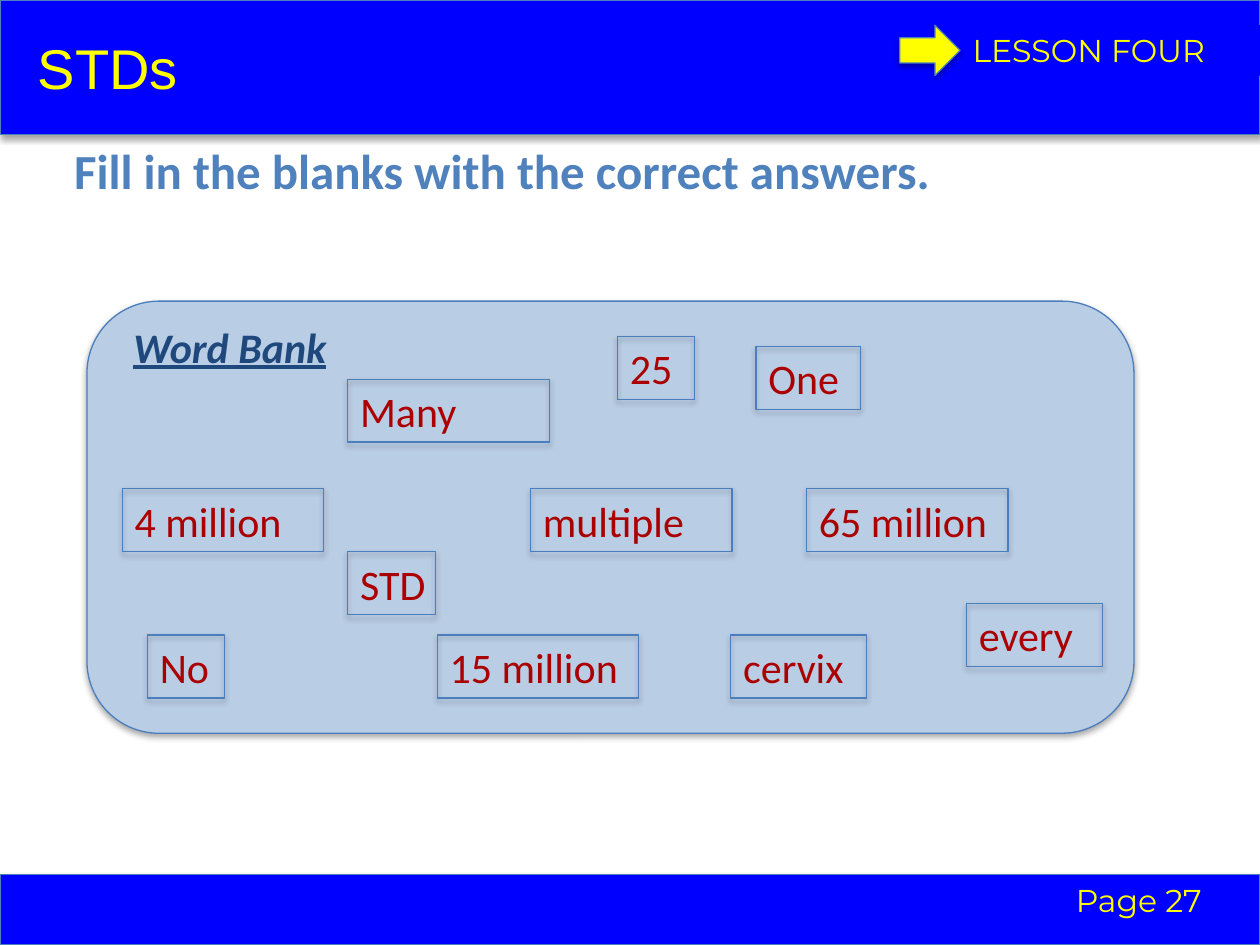
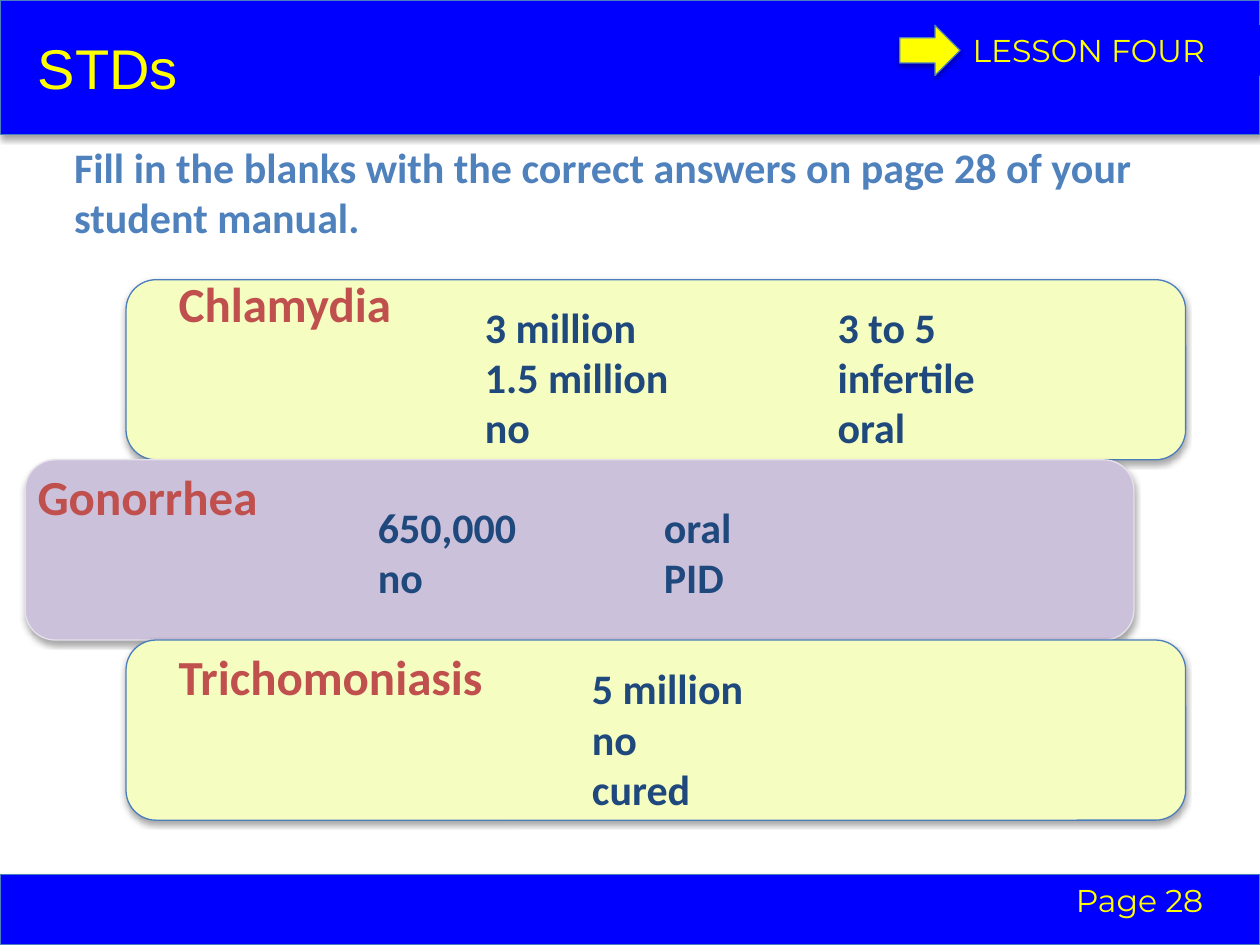
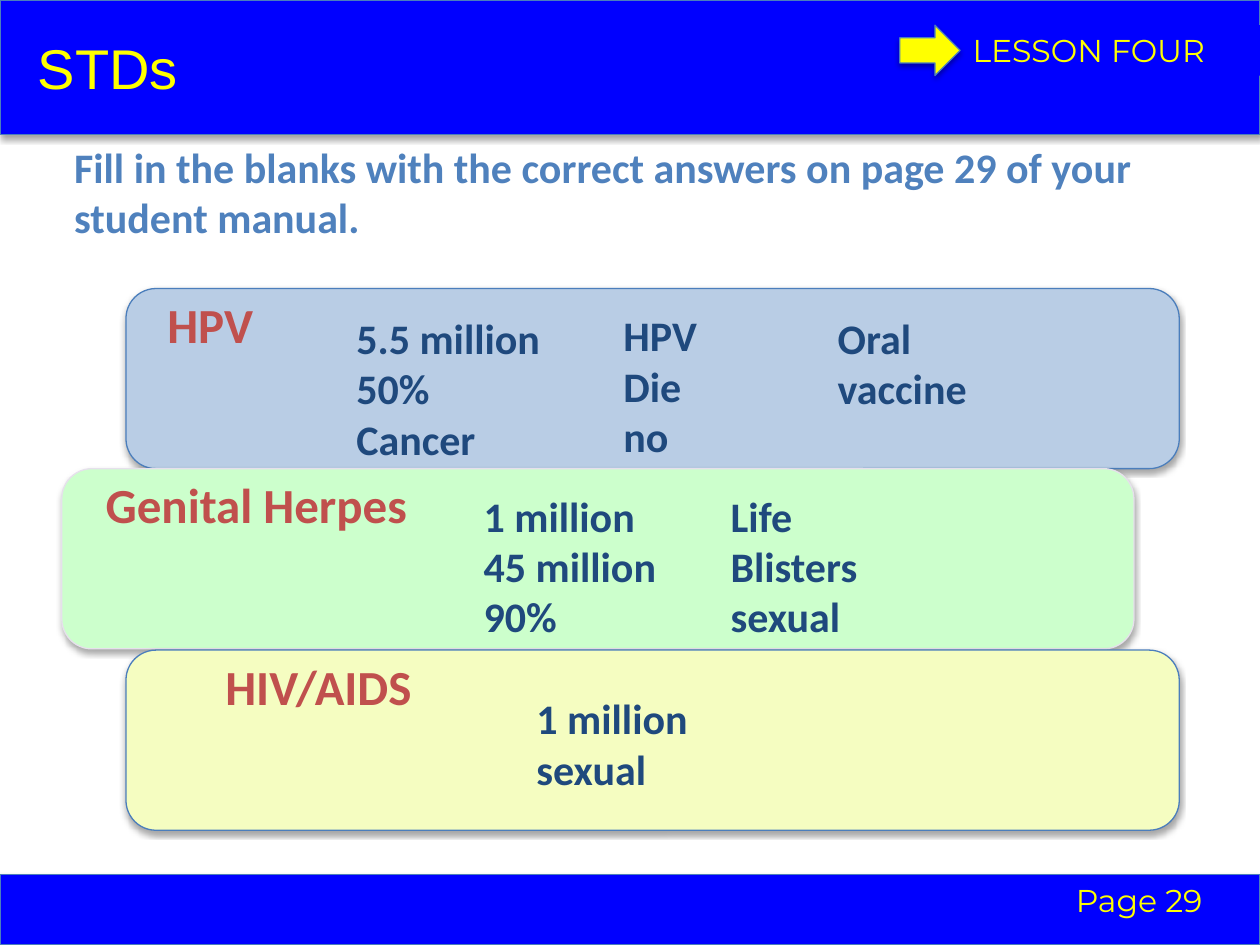
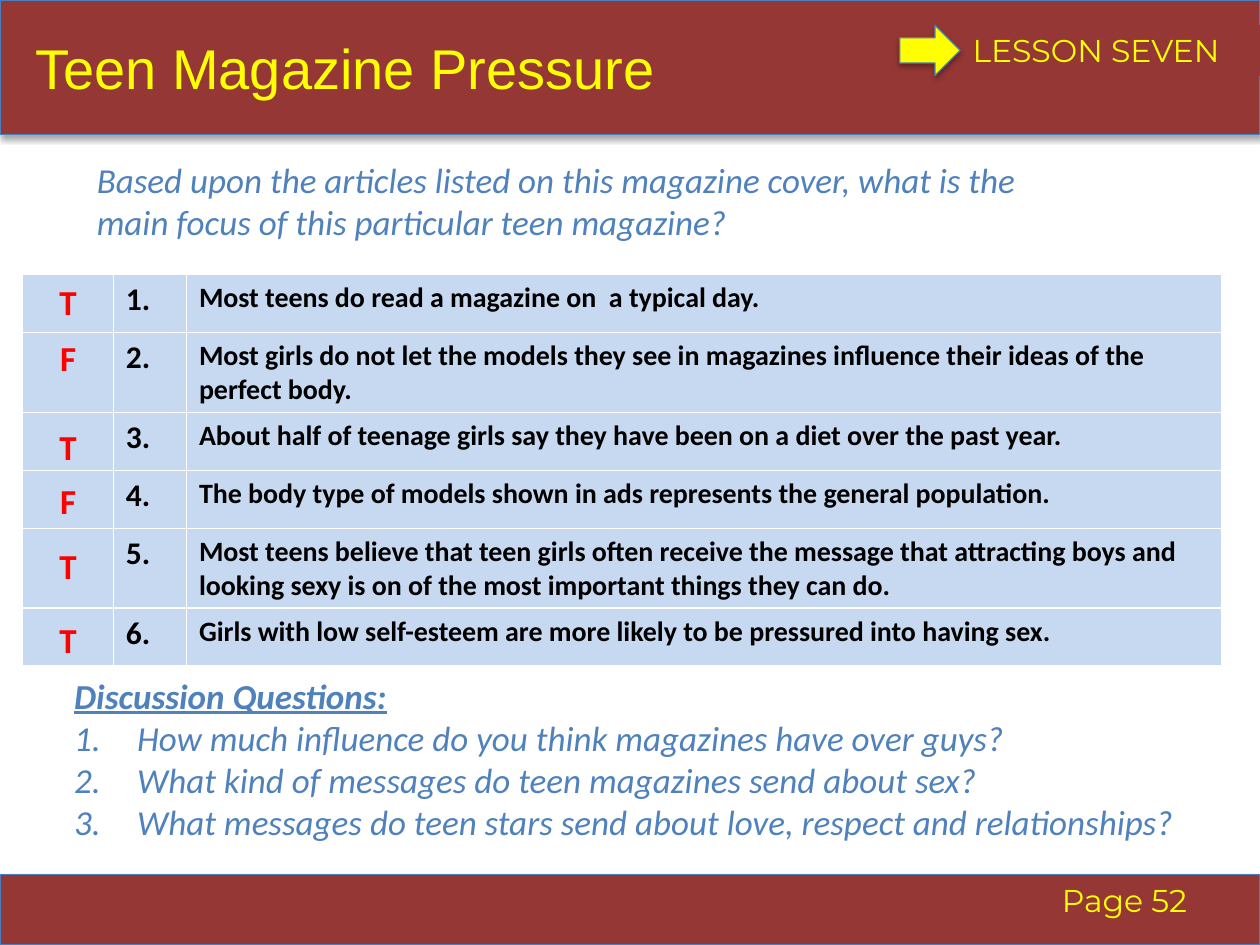
from lxml import etree
from pptx import Presentation
from pptx import util as u
from pptx.dml.color import RGBColor
from pptx.enum import shapes, text
from pptx.oxml import ns

PX = 9144  # EMU in one px, 100 px to the inch
WIDTH, HEIGHT = 1000, 750
LINE_24, PADDING = 41, 9  # height of a 24 pt line, and of a text box around its lines

COLORS = {
    "blue": "0000FF", "maroon": "953735", "yellow": "FFFF00", "outline": "4B7EBC",
    "prompt": "4F81BD", "navy": "1F497D", "brick": "C0504D", "crimson": "AA0000",
    "red": "FF0000", "black": "000000", "sky": "B9CDE5", "lemon": "F5FDC1",
    "lilac": "CCC1DA", "mint": "CCFFCC", "pale": "E6E0EC", "cell": "C6D9F1",
}

# word, left, top, text width, frame width; places are relative to the bank
BANK_WORDS = [
    ("25", 421, 28, 61, 61), ("15 million", 278, 265, 160, 160),
    ("65 million", 571, 149, 160, 160), ("4 million", 28, 149, 160, 160),
    ("No", 48, 265, 61, 61), ("multiple", 352, 149, 160, 160),
    ("cervix", 511, 265, 140, 108), ("One", 531, 36, 83, 83),
    ("Many", 207, 62, 134, 160), ("STD", 207, 199, 92, 70),
    ("every", 698, 240, 129, 108),
]

# card box, fill, line, heading (name, left, top, width), columns (left, top, width, lines)
CARDS_28 = [
    ((100, 222, 841, 143), "lemon", "outline", ("Chlamydia", 32, -10, 243),
     [(275, 12, 170, ["3 million", "1.5 million", "no"]),
      (555, 12, 243, ["3 to 5", "infertile", "oral"])]),
    ((20, 365, 880, 143), "lilac", "pale", ("Gonorrhea", 0, 0, 207),
     [(270, 28, 170, ["650,000", "no"]), (497, 28, 170, ["oral", "PID"])]),
    ((100, 508, 841, 143), "lemon", "outline", ("Trichomoniasis", 32, 0, 289),
     [(360, 13, 254, ["5 million", "no", "cured"])]),
]
CARDS_29 = [
    ((100, 229, 836, 143), "sky", "outline", ("HPV", 23, 0, 165),
     [(173, 14, 170, ["5.5 million", "50%", "Cancer"]),
      (385, 12, 170, ["HPV", "Die", "no"]),
      (555, 14, 170, ["Oral", "vaccine"])]),
    ((49, 372, 851, 143), "mint", "pale", ("Genital Herpes", 25, 0, 269),
     [(325, 12, 170, ["1 million", "45 million", "90%"]),
      (521, 12, 170, ["Life", "Blisters", "sexual"])]),
    ((100, 516, 836, 143), "lemon", "outline", ("HIV/AIDS", 69, 0, 252),
     [(316, 29, 170, ["1 million", "sexual"])]),
]

STATEMENTS = [
    "Most teens do read a magazine on  a typical day.",
    "Most girls do not let the models they see in magazines influence their ideas of the "
    "perfect body.",
    "About half of teenage girls say they have been on a diet over the past year.",
    "The body type of models shown in ads represents the general population.",
    "Most teens believe that teen girls often receive the message that attracting boys and "
    "looking sexy is on of the most important things they can do.",
    "Girls with low self-esteem are more likely to be pressured into having sex.",
]
# answer and its top, relative to the table
ANSWERS = [("T", 0), ("F", 44), ("T", 115), ("F", 158), ("T", 209), ("T", 268)]
QUESTIONS = [
    "How much influence do you think magazines have over guys?",
    "What kind of messages do teen magazines send about sex?",
    "What messages do teen stars send about love, respect and relationships?",
]


def emu(*lengths):
    return [u.Emu(length * PX) for length in lengths]


def rgb(name):
    return RGBColor.from_string(COLORS[name])


def style(para, size, color, name="Calibri", bold=False, italic=False, underline=False):
    font = para.font
    font.name, font.size, font.color.rgb = name, u.Pt(size), rgb(color)
    font.bold, font.italic, font.underline = bold, italic, underline


def write(frame, lines, size, color, align=text.PP_ALIGN.LEFT, **looks):
    """Fill a text frame with one paragraph per line, all in one style."""
    frame.word_wrap = True
    frame.text = "\n".join(lines)
    for para in frame.paragraphs:
        para.alignment = align
        style(para, size, color, **looks)


def add_text(page, box, lines, size, color, **looks):
    frame = page.shapes.add_textbox(*emu(*box)).text_frame
    write(frame, lines, size, color, **looks)
    frame.auto_size = text.MSO_AUTO_SIZE.SHAPE_TO_FIT_TEXT


def add_shadow(shape):
    shape.shadow.inherit = False
    effects = shape.element.spPr.find(ns.qn("a:effectLst"))
    shadow = etree.SubElement(effects, ns.qn("a:outerShdw"), blurRad="40000", dist="23000",
                              dir="5400000", rotWithShape="0")
    tone = etree.SubElement(shadow, ns.qn("a:srgbClr"), val=COLORS["black"])
    etree.SubElement(tone, ns.qn("a:alpha"), val="35000")


def add_panel(page, kind, box, fill=None, line="outline"):
    """Add an outlined shape with a soft shadow; without a fill it is a frame."""
    panel = page.shapes.add_shape(kind, *emu(*box))
    if fill:
        panel.fill.solid()
        panel.fill.fore_color.rgb = rgb(fill)
    else:
        panel.fill.background()
    panel.line.color.rgb = rgb(line)
    panel.line.width = u.Pt(0.75)
    add_shadow(panel)


def add_lesson_label(page, lesson, theme):
    label = page.shapes.add_shape(shapes.MSO_SHAPE.RECTANGLE, *emu(762, 20, 238, 40))
    label.shadow.inherit = False
    label.fill.solid()
    label.fill.fore_color.rgb = rgb(theme)
    label.line.fill.background()
    label.text_frame.vertical_anchor = text.MSO_ANCHOR.TOP
    write(label.text_frame, [lesson], 18, "yellow", name="Montserrat")
    add_panel(page, shapes.MSO_SHAPE.RIGHT_ARROW, (714, 20, 48, 40), "yellow")


def add_page(deck, title, lesson, number, theme="blue", title_left=20, number_left=844):
    """Add a slide with its header band, title, lesson label and footer band."""
    page = deck.slides.add_slide(deck.slide_layouts[5])
    for top, height in ((0, 107), (694, 56)):
        add_panel(page, shapes.MSO_SHAPE.RECTANGLE, (0, top, WIDTH, height), theme)
    heading = page.shapes.title
    heading.element.getparent().append(heading.element)  # in front of the band
    heading.left, heading.top, heading.width, heading.height = emu(
        title_left, 0, 655 - title_left, 107)
    heading.text_frame.vertical_anchor = text.MSO_ANCHOR.MIDDLE
    write(heading.text_frame, [title], 32, "yellow", name="Arial")
    add_lesson_label(page, lesson, theme)
    add_text(page, (number_left, 694, 984 - number_left, 40), [f"Page {number}"], 18,
             "yellow", name="Montserrat")
    return page


def add_word_bank(page, box):
    left, top = box[:2]
    add_panel(page, shapes.MSO_SHAPE.ROUNDED_RECTANGLE, box, "sky")
    add_text(page, (left + 27, top + 11, 181, 50), ["Word Bank"], 24, "navy",
             bold=True, italic=True, underline=True)
    for word, dx, dy, text_width, frame_width in BANK_WORDS:
        add_text(page, (left + dx, top + dy, text_width, 50), [word], 24, "crimson")
        add_panel(page, shapes.MSO_SHAPE.RECTANGLE, (left + dx, top + dy, frame_width, 50))


def add_card(page, box, fill, line, heading, columns):
    left, top = box[:2]
    add_panel(page, shapes.MSO_SHAPE.ROUNDED_RECTANGLE, box, fill, line)
    name, dx, dy, width = heading
    add_text(page, (left + dx, top + dy, width, 57), [name], 28, "brick", bold=True)
    for dx, dy, width, lines in columns:
        height = LINE_24 * len(lines) + PADDING
        add_text(page, (left + dx, top + dy, width, height), lines, 24, "navy", bold=True)


def add_card_page(deck, number, cards):
    page = add_page(deck, "STDs", "LESSON FOUR", number)
    prompt = f"Fill in the blanks with the correct answers on page {number} of your student manual."
    add_text(page, (49, 107, 892, 91), [prompt], 24, "prompt", bold=True)
    for card in cards:
        add_card(page, *card)


def add_statements(page, left, top):
    """Add the true-or-false table with the answers over its first column."""
    widths, row_height = (72, 58, 822), 46
    count = len(STATEMENTS)
    table = page.shapes.add_table(
        count, len(widths), *emu(left, top, sum(widths), row_height * count)).table
    table.horz_banding = False
    for column, width in zip(table.columns, widths):
        column.width = u.Emu(width * PX)
    for number, (row, statement) in enumerate(zip(table.rows, STATEMENTS), 1):
        for cell in row.cells:
            cell.fill.solid()
            cell.fill.fore_color.rgb = rgb("cell")
        write(row.cells[1].text_frame, [f"{number}."], 18, "black", bold=True)
        write(row.cells[2].text_frame, [statement], 16, "black", bold=True)
    for answer, dy in ANSWERS:
        add_text(page, (left, top + dy, widths[0], 44), [answer], 20, "red", bold=True,
                 align=text.PP_ALIGN.CENTER)


def add_discussion(page, box):
    frame = page.shapes.add_textbox(*emu(*box)).text_frame
    write(frame, ["Discussion Questions:", *QUESTIONS], 20, "prompt", italic=True)
    heading, *questions = frame.paragraphs
    style(heading, 20, "prompt", bold=True, italic=True, underline=True)
    indent = 50 * PX
    for para in questions:
        props = para._p.get_or_add_pPr()
        props.set("marL", str(indent))
        props.set("indent", str(-indent))
        numbering = etree.Element(ns.qn("a:buAutoNum"), type="arabicPeriod")
        props.insert(0, numbering)


def main():
    deck = Presentation()
    deck.slide_width, deck.slide_height = emu(WIDTH, HEIGHT)

    page = add_page(deck, "STDs", "LESSON FOUR", 27)
    add_text(page, (49, 107, 713, 57), ["Fill in the blanks with the correct answers."], 28,
             "prompt", bold=True)
    add_word_bank(page, (69, 239, 831, 343))

    add_card_page(deck, 28, CARDS_28)
    add_card_page(deck, 29, CARDS_29)

    page = add_page(deck, "Teen Magazine Pressure", "LESSON SEVEN", 52, theme="maroon",
                    title_left=18, number_left=833)
    add_text(page, (67, 121, 784, 111),
             ["Based upon the articles listed on this magazine cover, what is the main focus "
              "of this particular teen magazine?"], 20, "prompt", italic=True)
    add_statements(page, 18, 218)
    add_discussion(page, (49, 530, 921, 178))

    deck.save("out.pptx")


if __name__ == "__main__":
    main()
